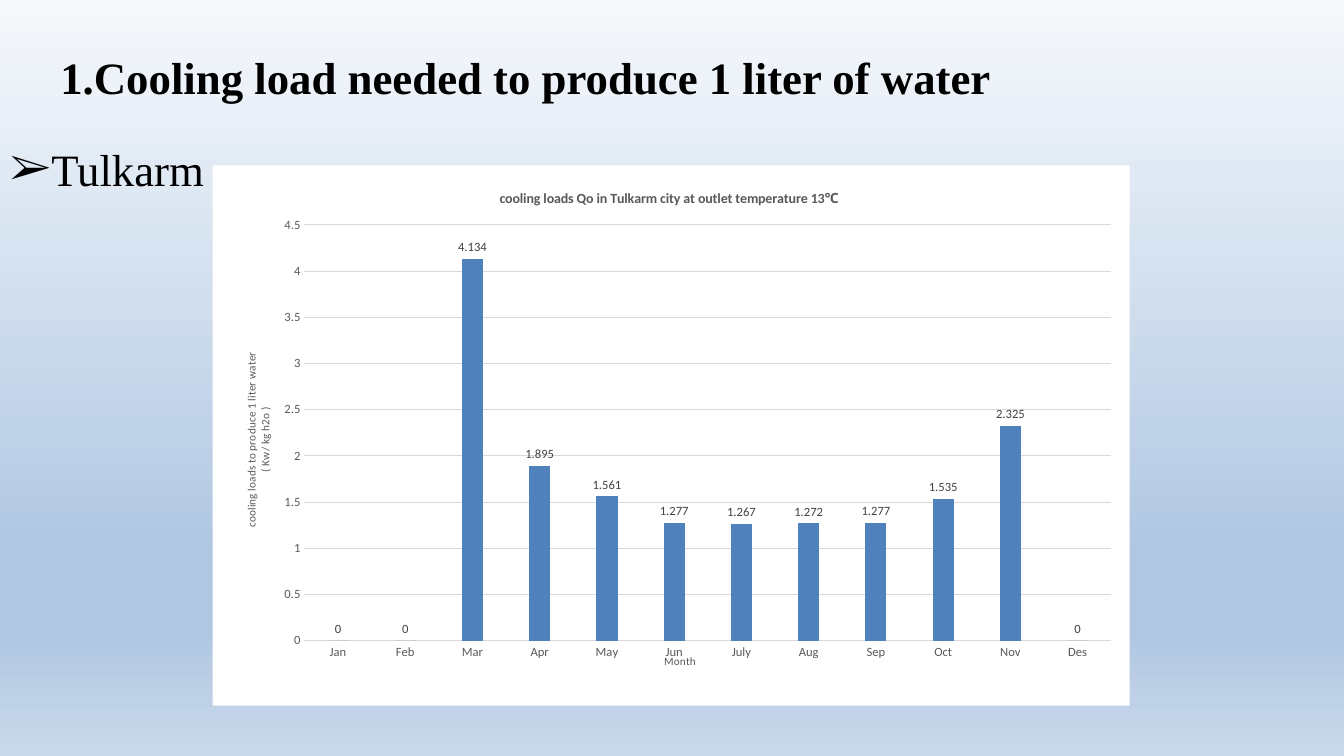
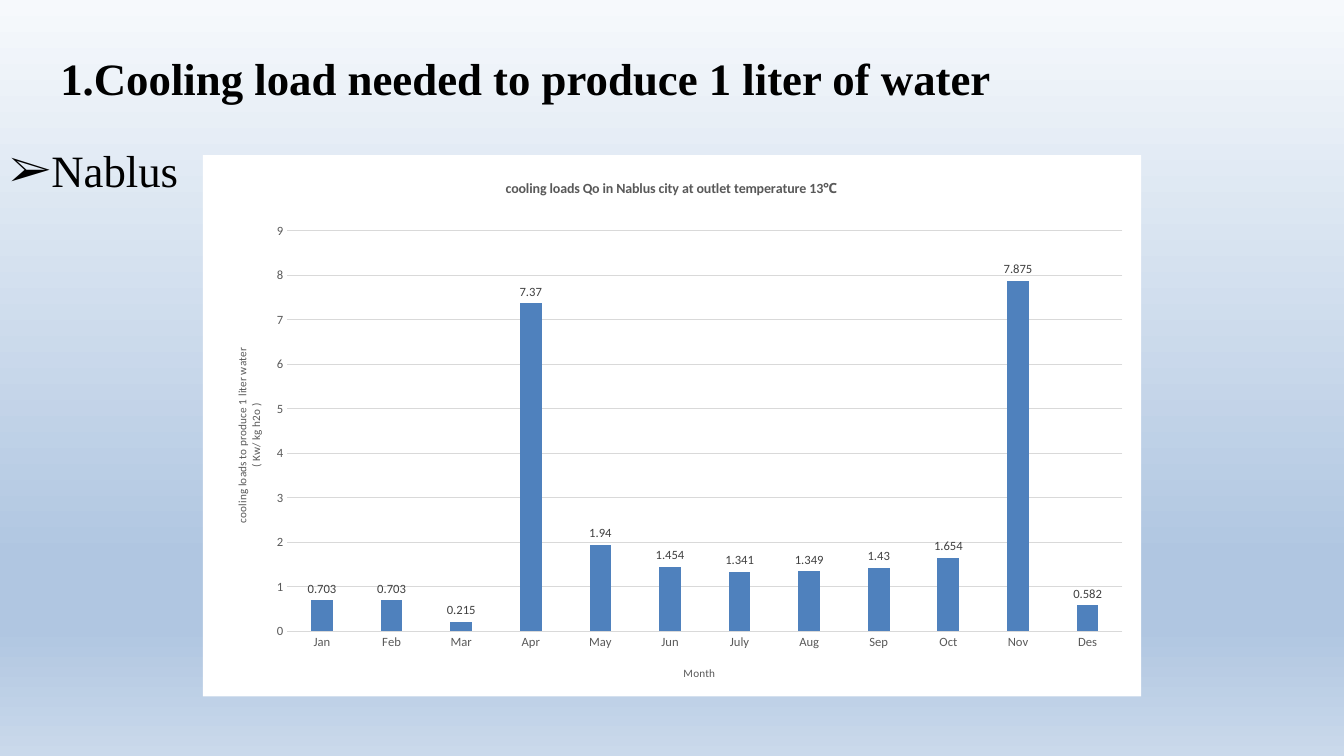
import lxml.etree
import copy
import pptx
import pptx.chart.data
import pptx.dml.color
import pptx.enum.chart
import pptx.oxml.ns
import pptx.util

Cm, Pt = pptx.util.Cm, pptx.util.Pt
qn = pptx.oxml.ns.qn
NO_TICK = pptx.enum.chart.XL_TICK_MARK.NONE

# Shared look
TEXT_FONT, CHART_FONT = "Times New Roman", "Calibri"
BLACK, WHITE, BAR = "000000", "FFFFFF", "4F81BD"
AXIS_TEXT, LABEL_TEXT, GRID = "595959", "404040", "D9D9D9"
BACKDROP = [(0, "F6F9FC"), (0.74, "B0C6E1"), (0.83, "B0C6E1"), (1, "CAD9EB")]

# Shared wording
HEADING = "Cooling load needed to produce 1 liter of water"
VALUE_TITLE = "cooling loads to produce 1 liter water\n( Kw/ kg h2o )"
MONTHS = ["Jan", "Feb", "Mar", "Apr", "May", "Jun",
          "July", "Aug", "Sep", "Oct", "Nov", "Des"]

# Frames are in cm; places inside a chart are fractions of its frame
CITIES = [
    {"name": "Tulkarm", "text_top": 1.27,
     "frame": (5.36, 4.17, 23.11, 13.61),
     "plot": (0.1, 0.11, 0.88, 0.77), "title": (0.31, 0.04),
     "month": (0.49, 0.9), "value": (0.03, 0.34), "top": 4.5, "step": 0.5,
     "loads": [0, 0, 4.134, 1.895, 1.561, 1.277,
               1.267, 1.272, 1.277, 1.535, 2.325, 0]},
    {"name": "Nablus", "text_top": 1.3,
     "frame": (5.11, 3.91, 23.65, 13.64),
     "plot": (0.09, 0.14, 0.89, 0.74), "title": (0.32, 0.04),
     "month": (0.51, 0.94), "value": (0.03, 0.35), "top": 9, "step": 1,
     "loads": [0.703, 0.703, 0.215, 7.37, 1.94, 1.454,
               1.341, 1.349, 1.43, 1.654, 7.875, 0.582]},
]


def rgb(value):
    return pptx.dml.color.RGBColor.from_string(value)


def apply_format(target, formats):
    for name, value in formats.items():
        setattr(target, name, value)


def style_font(font, name, size, color, bold=False):
    apply_format(font, {"name": name, "size": Pt(size), "bold": bold})
    font.color.rgb = rgb(color)


def add_node(parent, tag, **values):
    return lxml.etree.SubElement(parent, qn(tag), values)


# Background, set once on the master
def set_backdrop(master):
    fill = master.background.fill
    fill.gradient()
    fill.gradient_angle = 270
    stop_list = next(master.element.iter(qn("a:gsLst")))
    while len(stop_list) < len(BACKDROP):
        stop_list.append(copy.deepcopy(stop_list[0]))
    for stop, (position, color) in zip(fill.gradient_stops, BACKDROP):
        stop.position = position
        stop.color.rgb = rgb(color)


# Numbered heading and arrow bullet
def add_item(para, text, bullet, margin, hanging, formats, bold=False):
    apply_format(para, formats)
    span = para.add_run()
    span.text = text
    style_font(span.font, TEXT_FONT, 32, BLACK, bold)
    properties = para._p.get_or_add_pPr()
    properties.set("marL", str(Cm(margin)))
    properties.set("indent", str(-Cm(hanging)))
    add_node(properties, "a:buFont", typeface=TEXT_FONT)
    tag, key, value = bullet
    add_node(properties, tag, **{key: value})


def add_heading(page, city):
    box = page.shapes.add_textbox(0, Cm(city["text_top"]), Cm(30.48), Cm(12.57))
    frame = box.text_frame
    frame.word_wrap = True
    add_item(frame.paragraphs[0], HEADING,
             ("a:buAutoNum", "type", "arabicPeriod"), 2.06, 0.79,
             {"line_spacing": 0.9}, bold=True)
    add_item(frame.add_paragraph(), city["name"], ("a:buChar", "char", "➢"),
             0.96, 0.96, {"line_spacing": 1.5, "space_before": Pt(8)})


# Chart parts
def place_part(element, place, inner=False):
    layout = element.find(qn("c:layout"))
    if layout is None:
        layout = element.makeelement(qn("c:layout"))
        element.insert(0, layout)
    manual = add_node(layout, "c:manualLayout")
    if inner:
        add_node(manual, "c:layoutTarget", val="inner")
    for key in ("xMode", "yMode"):
        add_node(manual, f"c:{key}", val="edge")
    for key, value in zip("xywh", place):
        add_node(manual, f"c:{key}", val=str(value))


def set_title(title, text, size, place, bold=False, upright=True):
    frame = title.text_frame
    frame.text = text
    for para in frame.paragraphs:
        for span in para.runs:
            style_font(span.font, CHART_FONT, size, AXIS_TEXT, bold)
    if not upright:
        body = next(title.element.iter(qn("a:bodyPr")))
        body.set("rot", "-5400000")
        body.set("vert", "horz")
    place_part(title.element, place)


def set_line(line, color):
    line.color.rgb = rgb(color)
    line.width = Pt(0.75)


def style_axis(axis):
    apply_format(axis, {"major_tick_mark": NO_TICK, "minor_tick_mark": NO_TICK})
    style_font(axis.tick_labels.font, CHART_FONT, 9, AXIS_TEXT)


def fill_chart_area(chart):
    area = chart.element.makeelement(qn("c:spPr"))
    chart.element.find(qn("c:chart")).addnext(area)
    add_node(add_node(area, "a:solidFill"), "a:srgbClr", val=WHITE)
    add_node(add_node(area, "a:ln"), "a:noFill")


def add_load_chart(page, city):
    data = pptx.chart.data.CategoryChartData()
    data.categories = MONTHS
    data.add_series("Series 1", city["loads"])
    kind = pptx.enum.chart.XL_CHART_TYPE.COLUMN_CLUSTERED
    chart = page.shapes.add_chart(kind, *map(Cm, city["frame"]), data).chart
    style_font(chart.font, CHART_FONT, 10, BLACK)
    fill_chart_area(chart)
    chart.has_legend = False
    set_title(chart.chart_title,
              f"cooling loads Qo in {city['name']} city at outlet temperature 13℃",
              10, city["title"], bold=True)

    # Axes
    months, values = chart.category_axis, chart.value_axis
    for axis in (months, values):
        style_axis(axis)
    set_line(months.format.line, GRID)
    set_title(months.axis_title, "Month", 8, city["month"])
    apply_format(values, {"minimum_scale": 0, "maximum_scale": city["top"],
                          "major_unit": city["step"],
                          "has_major_gridlines": True})
    values.format.line.fill.background()
    set_line(values.major_gridlines.format.line, GRID)
    set_title(values.axis_title, VALUE_TITLE, 8, city["value"], upright=False)

    # Columns and their labels
    plot = chart.plots[0]
    apply_format(plot, {"gap_width": 219, "overlap": -27,
                        "vary_by_categories": False})
    series = plot.series[0]
    series.format.fill.solid()
    series.format.fill.fore_color.rgb = rgb(BAR)
    labels = series.data_labels
    apply_format(labels, {
        "show_value": True,
        "position": pptx.enum.chart.XL_LABEL_POSITION.OUTSIDE_END})
    style_font(labels.font, CHART_FONT, 9, LABEL_TEXT)
    place_part(next(chart.element.iter(qn("c:plotArea"))), city["plot"], inner=True)


def main():
    deck = pptx.Presentation()
    apply_format(deck, {"slide_width": Cm(33.87), "slide_height": Cm(19.05)})
    set_backdrop(deck.slide_master)
    for city in CITIES:
        page = deck.slides.add_slide(deck.slide_layouts[6])
        add_heading(page, city)
        add_load_chart(page, city)
    deck.save("out.pptx")


if __name__ == "__main__":
    main()
